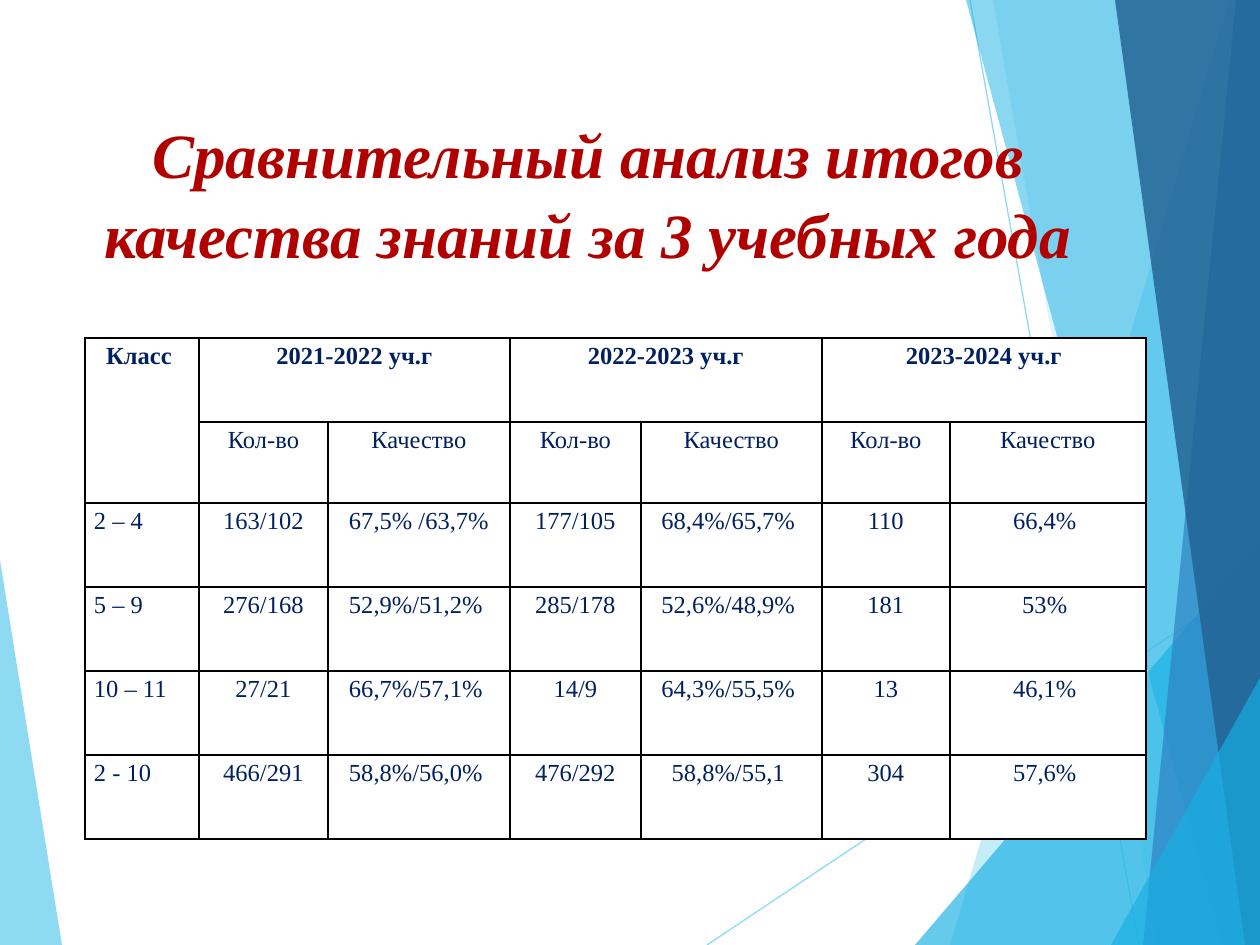
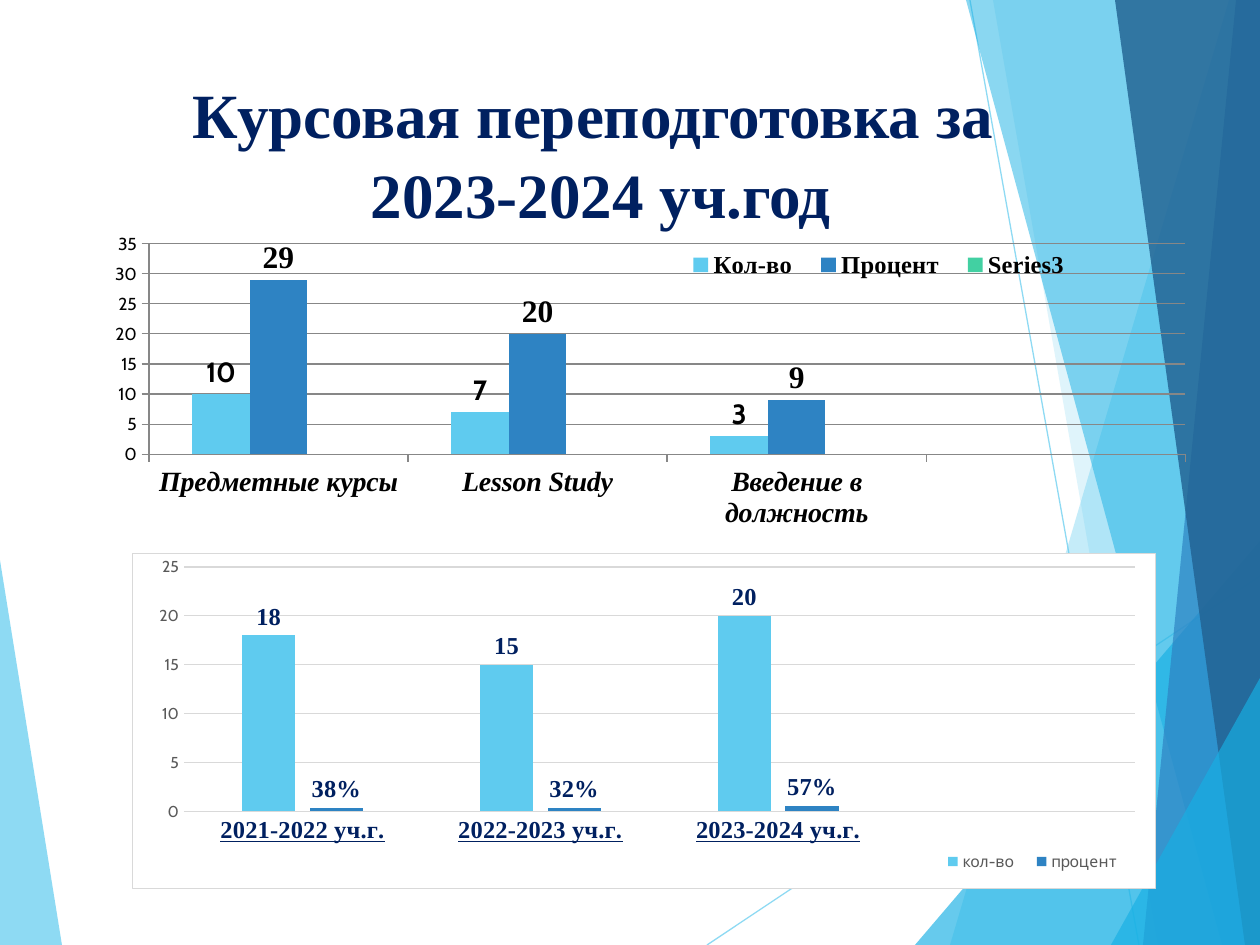
from pptx import Presentation, util as u
from pptx.chart.data import CategoryChartData
from pptx.dml.color import RGBColor
from pptx.enum import chart as ch, shapes, text
from pptx.oxml import parse_xml
from pptx.oxml.ns import nsdecls, qn

PX = 914400 / 126
WIDE, HIGH = 1260, 945
SERIF, SANS = "Times New Roman", "Cabin"
HUES = {
    "sky": "5FCBEF", "cyan": "17B0E4", "blue": "2E83C3", "deep": "226292",
    "green": "42D0A2", "navy": "002060", "red": "B00000", "black": "000000",
    "white": "FFFFFF", "grey": "878787", "pale": "D9D9D9", "slate": "595959",
}
SHARDS = [
    ("sky", 70, [(0, 560), (62, HIGH), (0, HIGH)]),
    ("sky", 36, [(1229, 0), (950, HIGH), (WIDE, HIGH), (WIDE, 0)]),
    ("sky", 20, [(993, 0), (1158, HIGH), (WIDE, HIGH), (WIDE, 0)]),
    ("cyan", 66, [(915, HIGH), (WIDE, 541), (WIDE, HIGH)]),
    ("cyan", 50, [(966, 0), (1222, HIGH), (WIDE, HIGH), (WIDE, 0)]),
    ("blue", 70, [(1236, 0), (1143, HIGH), (WIDE, HIGH), (WIDE, 0)]),
    ("deep", 82, [(1115, 0), (1245, HIGH), (WIDE, HIGH), (WIDE, 0)]),
    ("cyan", 66, [(1111, HIGH), (WIDE, 678), (WIDE, HIGH)]),
]
RAYS = [(707, HIGH, WIDE, 576), (970, 0, 1139, HIGH)]
COLS = [114, 129, 182, 131, 181, 128, 196]
ROWS = [84, 81, 84, 84, 84, 84]
YEARS = ["2021-2022 уч.г", "2022-2023 уч.г", "2023-2024 уч.г"]
MARKS = [
    ["2 – 4", "163/102", "67,5% /63,7%", "177/105", "68,4%/65,7% ", "110", "66,4% "],
    ["5 – 9", "276/168", "52,9%/51,2% ", "285/178", "52,6%/48,9% ", "181", "53% "],
    ["10 – 11", "27/21", "66,7%/57,1% ", "14/9", "64,3%/55,5% ", "13", "46,1% "],
    ["2 - 10", "466/291", "58,8%/56,0% ", "476/292", "58,8%/55,1 ", "304", "57,6% "],
]


def px(*nums):
    return [u.Emu(round(n * PX)) for n in nums]


def hue(name):
    return RGBColor.from_string(HUES[name])


def style(font, size, color, face=SERIF, bold=False, italic=False):
    font.size, font.name = u.Pt(size), face
    font.bold, font.italic = bold, italic
    font.color.rgb = hue(color)


def fade(shape, pct):
    """Make every colour of the shape partly transparent."""
    for clr in shape._element.spPr.iter(qn("a:srgbClr")):
        clr.append(parse_xml(f'<a:alpha {nsdecls("a")} val="{pct * 1000}"/>'))


def shard(slide, color, pct, pts):
    form = slide.shapes.build_freeform(*pts[0], scale=PX)
    form.add_line_segments(pts[1:], close=True)
    shape = form.convert_to_shape()
    shape.shadow.inherit = False
    shape.fill.solid()
    shape.fill.fore_color.rgb = hue(color)
    shape.line.fill.background()
    fade(shape, pct)


def ray(slide, ends):
    line = slide.shapes.add_connector(shapes.MSO_CONNECTOR.STRAIGHT, *px(*ends))
    line.line.width = u.Pt(0.75)
    line.line.color.rgb = hue("sky")
    line._element.spPr.append(parse_xml(f'<a:effectLst {nsdecls("a")}/>'))
    fade(line, 70)


def page(deck):
    """Add a blank slide with the shared backdrop."""
    slide = deck.slides.add_slide(deck.slide_layouts[6])
    shard(slide, *SHARDS[0])
    for ends in RAYS:
        ray(slide, ends)
    for item in SHARDS[1:]:
        shard(slide, *item)
    return slide


def title(slide, lines, box, color, italic=False):
    frame = slide.shapes.add_textbox(*px(*box)).text_frame
    frame.word_wrap = True
    frame.vertical_anchor = text.MSO_ANCHOR.TOP
    para = frame.paragraphs[0]
    para.alignment = text.PP_ALIGN.CENTER
    para.line_spacing = 1.05
    for i, line in enumerate(lines):
        if i:
            para.add_line_break()
        run = para.add_run()
        run.text = line
        style(run.font, 36, color, bold=True, italic=italic)


def edge(cell):
    props = cell._tc.get_or_add_tcPr()
    for i, side in enumerate(("lnL", "lnR", "lnT", "lnB")):
        props.insert(i, parse_xml(
            f'<a:{side} {nsdecls("a")} w="12700"><a:solidFill>'
            f'<a:srgbClr val="{HUES["black"]}"/></a:solidFill></a:{side}>'))


def write(cell, words, head=False, left=False):
    roomy = head or left
    pads = px(*((9, 5, 9, 5) if roomy else (8, 1, 8, 0)))
    cell.margin_left, cell.margin_top, cell.margin_right, cell.margin_bottom = pads
    para = cell.text_frame.paragraphs[0]
    para.alignment = text.PP_ALIGN.LEFT if left else text.PP_ALIGN.CENTER
    if not roomy:
        para.line_spacing = 1.15
    run = para.add_run()
    run.text = words
    style(run.font, 14, "navy", bold=head)


def grid(slide):
    frame = slide.shapes.add_table(
        len(ROWS), len(COLS), *px(85, 338, sum(COLS), sum(ROWS)))
    table = frame.table
    table.first_row = table.horz_banding = False
    for col, width in zip(table.columns, px(*COLS)):
        col.width = width
    for row, height in zip(table.rows, px(*ROWS)):
        row.height = height
    for cell in table.iter_cells():
        cell.fill.solid()
        cell.fill.fore_color.rgb = hue("white")
        edge(cell)
    table.cell(0, 0).merge(table.cell(1, 0))
    write(table.cell(0, 0), "Класс ", head=True)
    for i, year in enumerate(YEARS):
        c = 1 + 2 * i
        table.cell(0, c).merge(table.cell(0, c + 1))
        write(table.cell(0, c), year, head=True)
        write(table.cell(1, c), "Кол-во")
        write(table.cell(1, c + 1), "Качество")
    for r, marks in enumerate(MARKS, 2):
        for c, mark in enumerate(marks):
            write(table.cell(r, c), mark, left=c == 0)


def place(el, at, box, inner=False):
    """Give a chart part a fixed place, in shares of the chart."""
    for old in el.findall(qn("c:layout")):
        el.remove(old)
    tags = '<c:layoutTarget val="inner"/>' if inner else ""
    tags += "".join(f'<c:{k}Mode val="edge"/>' for k in "xy")
    tags += "".join(f'<c:{k} val="{v}"/>' for k, v in zip("xywh", box))
    el.insert(at, parse_xml(
        f'<c:layout {nsdecls("c")}><c:manualLayout>{tags}'
        '</c:manualLayout></c:layout>'))


def back(chart, color=None, rim=None):
    """Set the chart's own fill and border."""
    def paint(name):
        return (f'<a:solidFill><a:srgbClr val="{HUES[name]}"/></a:solidFill>'
                if name else "<a:noFill/>")
    props = parse_xml(
        f'<c:spPr {nsdecls("c", "a")}>{paint(color)}'
        f'<a:ln w="9525">{paint(rim)}</a:ln></c:spPr>')
    chart._chartSpace.find(qn("c:txPr")).addprevious(props)


def bars(slide, box, cats, rows, plot, gap, lap, top, rule):
    """Add a column chart; rows hold name, values, colour, format."""
    data = CategoryChartData()
    data.categories = cats + [""]
    for name, vals, _, form in rows:
        data.add_series(name, vals + [None] * (len(cats) + 1 - len(vals)), form)
    chart = slide.shapes.add_chart(
        ch.XL_CHART_TYPE.COLUMN_CLUSTERED, *px(*box), data).chart
    chart.has_title = False
    style(chart.font, 10, "black", SANS)
    bar = chart.plots[0]
    bar.gap_width, bar.overlap, bar.vary_by_categories = gap, lap, False
    for series, row in zip(bar.series, rows):
        series.format.fill.solid()
        series.format.fill.fore_color.rgb = hue(row[2])
        series.invert_if_negative = False
    axis = chart.value_axis
    axis.minimum_scale, axis.maximum_scale, axis.major_unit = 0, top, 5
    for line in (axis.major_gridlines.format.line, axis.format.line,
                 chart.category_axis.format.line):
        line.color.rgb = hue(rule)
        line.width = u.Pt(0.75)
    place(chart._chartSpace.chart.plotArea, 0, plot, inner=True)
    return chart


def tags(series, size, color, face=SERIF, form="General"):
    labels = series.data_labels
    labels.show_value = True
    labels.position = ch.XL_LABEL_POSITION.OUTSIDE_END
    labels.number_format, labels.number_format_is_linked = form, False
    style(labels.font, size, color, face, bold=True)


def legend(chart, pos, box, *look, **more):
    chart.has_legend = True
    chart.legend.position = pos
    chart.legend.include_in_layout = False
    style(chart.legend.font, *look, **more)
    place(chart.legend._element, 1, box)


def courses(slide):
    rows = [("Кол-во", [10, 7, 3], "sky", "General"),
            ("Процент", [29, 20, 9], "blue", "General"),
            ("Series3", [], "green", "General")]
    chart = bars(slide, (71, 233, 1115, 307),
                 ["Предметные курсы", "Lesson Study", "Введение в должность"],
                 rows, (0.07, 0.03, 0.93, 0.69), 150, 0, 35, "grey")
    back(chart)
    style(chart.category_axis.tick_labels.font, 16, "black", bold=True, italic=True)
    first, second, _ = chart.plots[0].series
    tags(first, 16, "black", SANS)
    tags(second, 18, "black")
    legend(chart, ch.XL_LEGEND_POSITION.RIGHT, (0.54, 0.04, 0.37, 0.12),
           14, "black", bold=True)


def trend(slide):
    rows = [("кол-во", [18, 15, 20], "sky", "General"),
            ("процент", [0.38, 0.32, 0.57], "blue", "0%")]
    chart = bars(slide, (132, 553, 1024, 336), [f"{y}." for y in YEARS],
                 rows, (0.05, 0.04, 0.93, 0.73), 219, -27, 25, "pale")
    back(chart, "white", "pale")
    for axis in (chart.category_axis, chart.value_axis):
        axis.major_tick_mark = ch.XL_TICK_MARK.NONE
    chart.value_axis.format.line.fill.background()
    style(chart.value_axis.tick_labels.font, 9, "slate", SANS)
    font = chart.category_axis.tick_labels.font
    style(font, 14, "navy", bold=True)
    font.underline = True
    for series, row in zip(chart.plots[0].series, rows):
        tags(series, 14, "navy", form=row[3])
    legend(chart, ch.XL_LEGEND_POSITION.BOTTOM, (0.78, 0.88, 0.2, 0.08),
           9, "slate", SANS)


def main():
    deck = Presentation()
    deck.slide_width, deck.slide_height = px(WIDE, HIGH)
    slide = page(deck)
    title(slide, ["Сравнительный анализ итогов качества знаний за 3 учебных года"],
          (71, 106, 1034, 212), "red", italic=True)
    grid(slide)
    slide = page(deck)
    title(slide, ["Курсовая переподготовка за ", "2023-2024 уч.год"],
          (71, 66, 1060, 168), "navy")
    courses(slide)
    trend(slide)
    deck.save("out.pptx")


if __name__ == "__main__":
    main()
